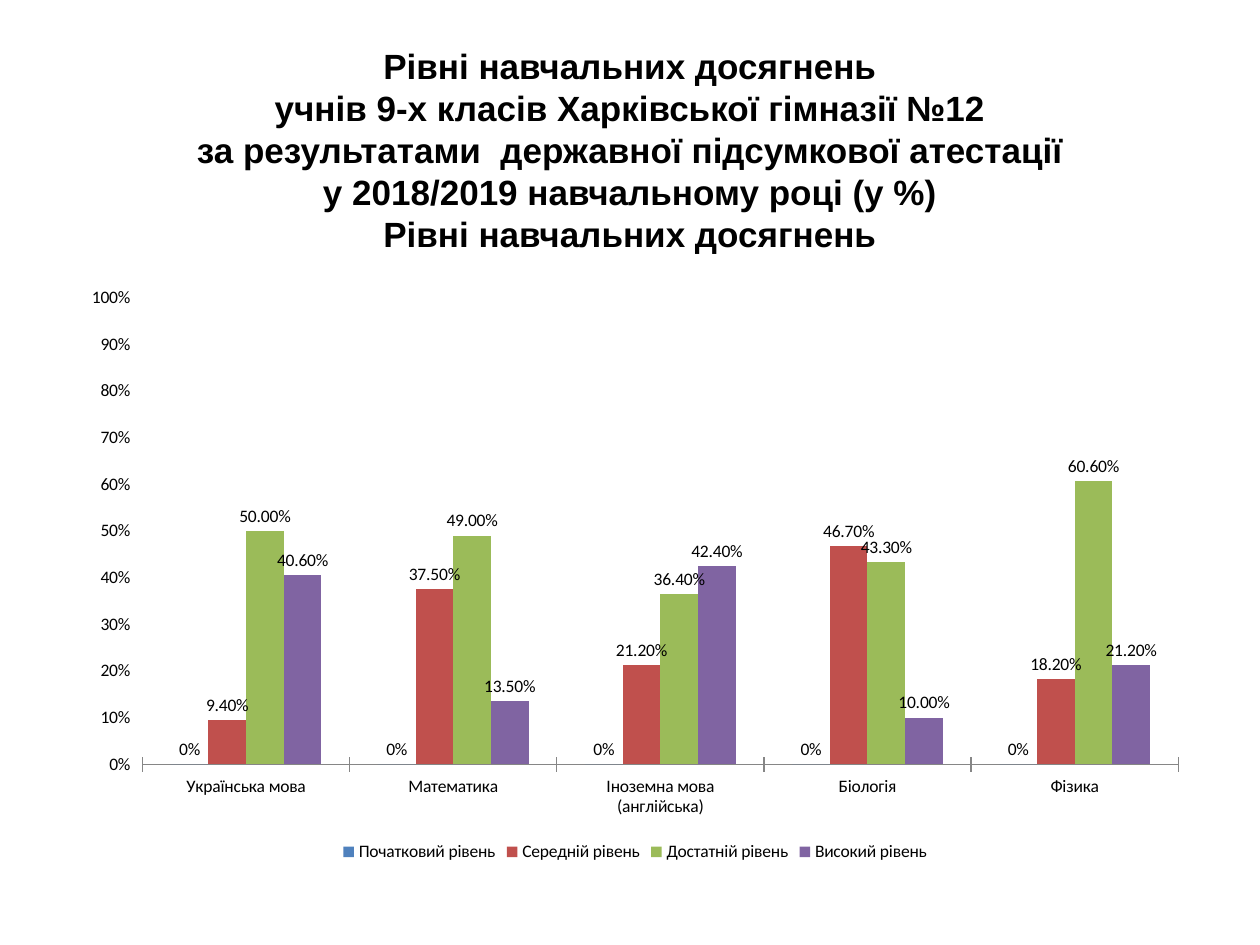
from pptx import Presentation
from pptx.chart.data import CategoryChartData
from pptx.dml.color import RGBColor
from pptx.enum.chart import XL_CHART_TYPE, XL_LABEL_POSITION, XL_LEGEND_POSITION, XL_TICK_MARK
from pptx.enum.text import MSO_ANCHOR, PP_ALIGN
from pptx.oxml import parse_xml
from pptx.oxml.ns import nsdecls
from pptx.util import Pt


def color(hex_value):
    return RGBColor.from_string(hex_value)


def apply_format(target, values):
    for name, value in values.items():
        setattr(target, name, value)


heading_lines = [
    "Рівні навчальних досягнень",
    "учнів 9-х класів Харківської гімназії №12",
    "за результатами  державної підсумкової атестації",
    "у 2018/2019 навчальному році (у %)",
    "Рівні навчальних досягнень",
]
subjects = ["Українська мова", "Математика", "Іноземна мова (англійська)", "Біологія", "Фізика"]
levels = [
    ("Початковий рівень", [0, 0, 0, 0, 0], "4F81BD", "0%"),
    ("Середній рівень", [0.094, 0.375, 0.212, 0.467, 0.182], "C0504D", "0.00%"),
    ("Достатній рівень", [0.5, 0.49, 0.364, 0.433, 0.606], "9BBB59", "0.00%"),
    ("Високий рівень", [0.406, 0.135, 0.424, 0.1, 0.212], "8064A2", "0.00%"),
]

presentation = Presentation()
apply_format(presentation, {"slide_width": Pt(720), "slide_height": Pt(540)})
slide = presentation.slides.add_slide(presentation.slide_layouts[6])

heading = slide.shapes.add_textbox(Pt(88.5), Pt(21.6), Pt(543), Pt(150.5)).text_frame
apply_format(heading, {"word_wrap": True, "vertical_anchor": MSO_ANCHOR.TOP})
heading.text = "\n".join(heading_lines)
for line in heading.paragraphs:
    apply_format(line, {"alignment": PP_ALIGN.CENTER, "line_spacing": Pt(24)})
    apply_format(line.runs[0].font, {"name": "Arial", "size": Pt(20), "bold": True})
    line.runs[0].font.color.rgb = color("000000")

results = CategoryChartData(number_format="0.00%")
results.categories = subjects
for level, shares, fill, label_format in levels:
    results.add_series(level, shares, number_format=label_format)

chart = slide.shapes.add_chart(
    XL_CHART_TYPE.COLUMN_CLUSTERED, Pt(39.6), Pt(157.7), Pt(646.6), Pt(337.7), results
).chart
apply_format(chart, {"has_title": False, "has_legend": True})
apply_format(chart.font, {"name": "Calibri", "size": Pt(10)})
chart.font.color.rgb = color("000000")
apply_format(chart.legend, {"position": XL_LEGEND_POSITION.BOTTOM, "include_in_layout": False})

columns = chart.plots[0]
apply_format(columns, {"gap_width": 150, "overlap": 0, "vary_by_categories": False})
for series, (level, shares, fill, label_format) in zip(columns.series, levels):
    series.format.fill.solid()
    series.format.fill.fore_color.rgb = color(fill)
    series.invert_if_negative = False
    apply_format(series.data_labels, {
        "show_value": True,
        "number_format": label_format,
        "number_format_is_linked": False,
        "position": XL_LABEL_POSITION.OUTSIDE_END,
    })

subject_axis = chart.category_axis
subject_axis.major_tick_mark = XL_TICK_MARK.CROSS
subject_axis.format.line.color.rgb = color("868686")

share_axis = chart.value_axis
apply_format(share_axis, {
    "minimum_scale": 0,
    "maximum_scale": 1,
    "major_unit": 0.1,
    "major_tick_mark": XL_TICK_MARK.CROSS,
    "has_major_gridlines": True,
})
apply_format(share_axis.tick_labels, {"number_format": "0%", "number_format_is_linked": False})
share_axis.format.line.fill.background()
share_axis.major_gridlines.format.line.width = Pt(0.75)
share_axis.major_gridlines.format.line.color.rgb = color("FFFFFF")

chart.element.chart.plotArea.append(parse_xml(
    f'<c:spPr {nsdecls("c", "a")}><a:solidFill><a:srgbClr val="FFFFFF"/></a:solidFill></c:spPr>'
))

presentation.save("out.pptx")
